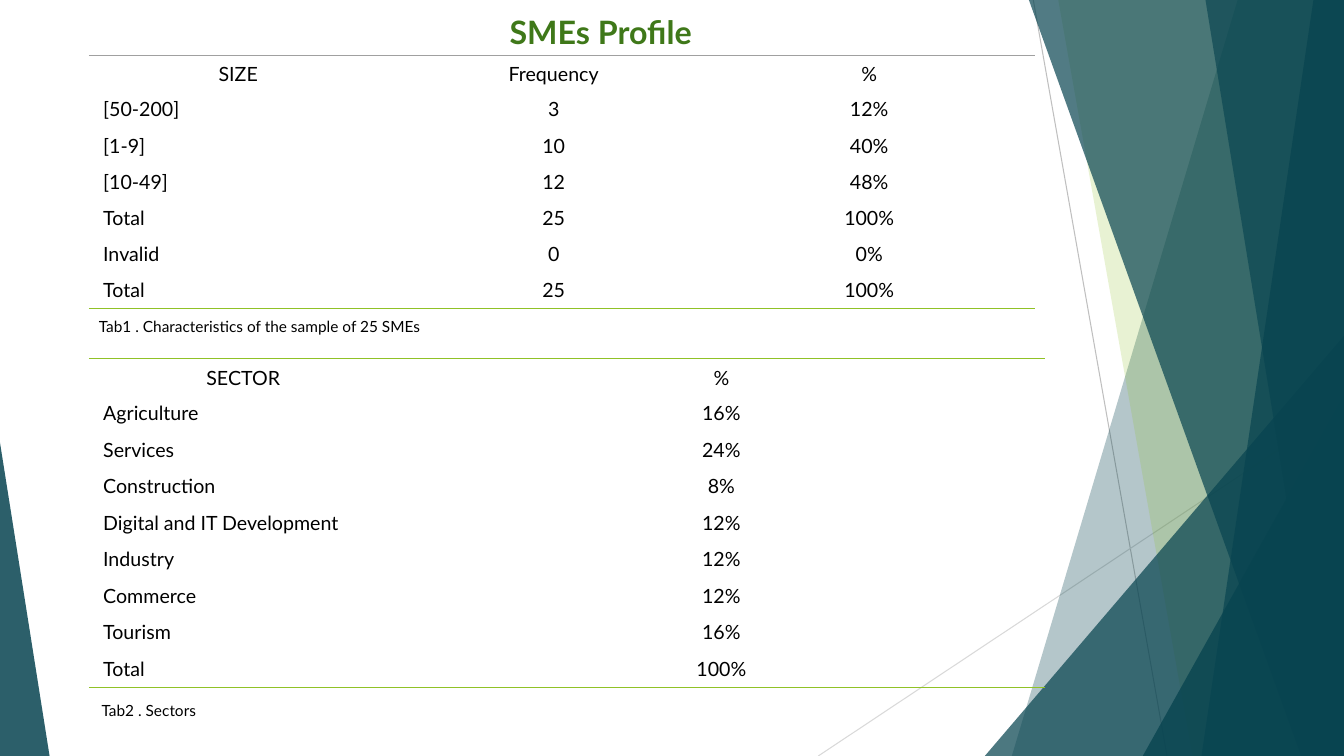
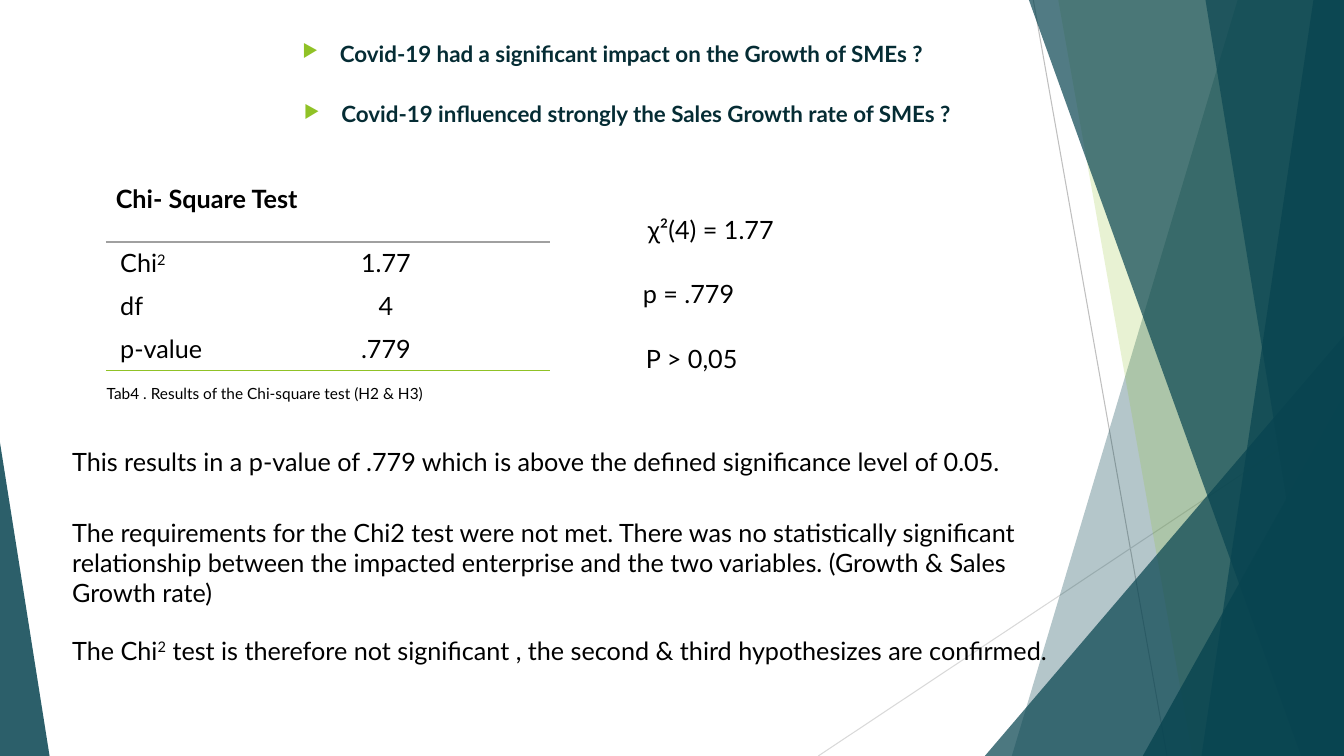
"""Build two slides on SME survey results: the sample profile and a chi-square test."""
import dataclasses
import typing

import lxml.etree
import pptx
import pptx.dml.color
import pptx.enum.shapes
import pptx.enum.text
import pptx.oxml.ns
import pptx.slide
import pptx.util

Cm = pptx.util.Cm
qn = pptx.oxml.ns.qn
Align = pptx.enum.text.PP_ALIGN
Anchor = pptx.enum.text.MSO_ANCHOR


@dataclasses.dataclass(frozen=True)
class Theme:
    font: str = "Lato"
    text: str = "000000"
    title: str = "3F7819"
    question: str = "052C34"
    teal: str = "084450"
    green: str = "90C226"
    rule: str = "A0A0A0"
    hairline: str = "BFBFBF"
    pale_hairline: str = "D9D9D9"
    title_size: float = 23
    body_size: float = 18
    question_size: float = 16
    table_size: float = 14
    caption_size: float = 11
    plain_table: str = "{2D5ABB26-0587-4C30-8999-92F81FD0307C}"


THEME = Theme()
WIDTH, HEIGHT = 33.87, 19.05


@dataclasses.dataclass(frozen=True)
class Ribbon:
    top: float
    bottom: float
    color: str
    opacity: int


@dataclasses.dataclass(frozen=True)
class Wedge:
    left: float
    top: float
    width: float
    apex: float
    opacity: int


@dataclasses.dataclass(frozen=True)
class Hairline:
    start: tuple[float, float]
    end: tuple[float, float]
    color: str


@dataclasses.dataclass(frozen=True)
class TextBlock:
    text: str
    left: float
    top: float
    width: float
    height: float = 1.02
    size: float = THEME.body_size
    color: str = THEME.text
    bold: bool = False
    centered: bool = False
    bullet: bool = False
    line_spacing: float = 1.0


@dataclasses.dataclass(frozen=True)
class DataTable:
    left: float
    top: float
    columns: tuple[float, ...]
    row_height: float
    rows: tuple[tuple[str, ...], ...]
    size: float = THEME.table_size
    top_color: str = THEME.rule
    header: bool = True


HAIRLINES = (
    Hairline((26.04, 0), (29.41, HEIGHT), THEME.hairline),
    Hairline((WIDTH, 10.24), (20.62, HEIGHT), THEME.pale_hairline),
)
FACETS = (
    Ribbon(31.19, 25.5, THEME.teal, 30),
    Ribbon(26.67, 30.05, THEME.green, 20),
    Wedge(24.82, 8.46, 9.05, 1, 72),
    Ribbon(25.93, 32.79, THEME.teal, 70),
    Ribbon(33.1, 30.28, THEME.teal, 70),
    Ribbon(30.38, 33.48, THEME.teal, 65),
    Wedge(28.8, 9.98, 5.07, 1, 80),
    Wedge(0, 11.15, 1.25, 0, 85),
)


def caption(text: str, left: float, top: float) -> TextBlock:
    return TextBlock(text, left, top, 12.52, 0.74, THEME.caption_size)


def question(text: str, left: float, top: float, width: float) -> TextBlock:
    return TextBlock(text, left, top, width, 1.2, THEME.question_size,
                     THEME.question, bold=True, centered=True, bullet=True)


PROFILE = (
    TextBlock("SMEs Profile", 9.02, 0.13, 12.24, 1.27, THEME.title_size,
              THEME.title, bold=True, centered=True, line_spacing=1.07),
    DataTable(2.24, 1.4, (7.95, 7.95, 7.95), 0.91, (
        ("SIZE", "Frequency", "%"),
        ("[50-200]", "3", "12%"),
        ("[1-9]", "10", "40%"),
        ("[10-49]", "12", "48%"),
        ("Total", "25", "100%"),
        ("Invalid", "0", "0%"),
        ("Total", "25", "100%"),
    )),
    caption("Tab1 . Characteristics of the sample of 25 SMEs", 2.24, 7.87),
    DataTable(2.24, 9.04, (8.2, 15.9), 0.92, (
        ("SECTOR", "%"),
        ("Agriculture", "16%"),
        ("Services", "24%"),
        ("Construction", "8%"),
        ("Digital and IT Development", "12%"),
        ("Industry", "12%"),
        ("Commerce", "12%"),
        ("Tourism", "16%"),
        ("Total", "100%"),
    ), top_color=THEME.green),
    caption("Tab2 . Sectors", 2.31, 17.55),
)
CHI_SQUARE = (
    question("Covid-19 had a significant impact on the Growth of SMEs ?", 5.28, 0.89, 20.32),
    question("Covid-19 influenced strongly the Sales Growth rate of SMEs ?", 5.89, 2.41, 19.84),
    TextBlock("Chi- Square Test", 2.67, 4.5, 9.25, bold=True),
    DataTable(2.67, 6.1, (3.45, 7.75), 1.08, (
        ("Chi^2", "1.77"),
        ("df", "4"),
        ("p-value", ".779"),
    ), size=THEME.body_size, header=False),
    caption("Tab4 . Results of the Chi-square test (H2 & H3)", 2.44, 9.55),
    TextBlock("χ²(4) = 1.77", 16.08, 5.28, 4.17),
    TextBlock("p = .779", 15.95, 6.88, 3.2),
    TextBlock("P > 0,05", 16.03, 8.53, 3.2),
    TextBlock("This results in a p-value of .779 which is above the defined significance level "
              "of 0.05.", 1.57, 11.13, 26.14),
    TextBlock("The requirements for the Chi2 test were not met. There was no statistically "
              "significant relationship between the impacted enterprise and the two variables. "
              "(Growth & Sales Growth rate)", 1.57, 12.9, 26.14, 2.57),
    TextBlock("The Chi^2^ test is therefore not significant , the second & third hypothesizes "
              "are confirmed.", 1.57, 15.88, 27.74),
)


def rgb(color: str) -> pptx.dml.color.RGBColor:
    return pptx.dml.color.RGBColor.from_string(color)


def write_text(para: typing.Any, text: str, *, size: float, color: str = THEME.text,
               bold: bool = False, centered: bool = False) -> None:
    para.alignment = Align.CENTER if centered else Align.LEFT
    for index, part in enumerate(text.split("^")):
        if not part:
            continue
        span = para.add_run()
        span.text = part
        span.font.name = THEME.font
        span.font.size = pptx.util.Pt(size)
        span.font.bold = bold
        span.font.color.rgb = rgb(color)
        if index % 2:
            span._r.get_or_add_rPr().set("baseline", "30000")


def add_bullet(para: typing.Any) -> None:
    properties = para._p.get_or_add_pPr()
    properties.set("marL", str(Cm(0.95)))
    properties.set("indent", str(-Cm(0.95)))
    bullet_color = lxml.etree.SubElement(properties, qn("a:buClr"))
    lxml.etree.SubElement(bullet_color, qn("a:srgbClr"), val=THEME.green)
    lxml.etree.SubElement(properties, qn("a:buSzPct"), val="80000")
    lxml.etree.SubElement(properties, qn("a:buChar"), char="▶")


def draw_text(page: pptx.slide.Slide, block: TextBlock) -> None:
    box = page.shapes.add_textbox(Cm(block.left), Cm(block.top), Cm(block.width), Cm(block.height))
    box.text_frame.word_wrap = True
    para = box.text_frame.paragraphs[0]
    para.line_spacing = block.line_spacing
    write_text(para, block.text, size=block.size, color=block.color,
               bold=block.bold, centered=block.centered)
    if block.bullet:
        add_bullet(para)


def add_border(cell: typing.Any, edge: str, color: str) -> None:
    line = lxml.etree.Element(qn(f"a:{edge}"), w=str(pptx.util.Pt(1)))
    fill = lxml.etree.SubElement(line, qn("a:solidFill"))
    lxml.etree.SubElement(fill, qn("a:srgbClr"), val=color)
    cell._tc.get_or_add_tcPr().insert(0, line)


def draw_table(page: pptx.slide.Slide, data: DataTable) -> None:
    count = len(data.rows)
    frame = page.shapes.add_table(count, len(data.columns), Cm(data.left), Cm(data.top),
                                  Cm(sum(data.columns)), Cm(data.row_height * count))
    table = frame.table
    table.first_row = table.horz_banding = False
    frame.element.find(f".//{qn('a:tableStyleId')}").text = THEME.plain_table
    for column, width in zip(table.columns, data.columns):
        column.width = Cm(width)
    for row_index, values in enumerate(data.rows):
        table.rows[row_index].height = Cm(data.row_height)
        is_header = data.header and row_index == 0
        for column_index, value in enumerate(values):
            cell = table.cell(row_index, column_index)
            cell.fill.background()
            cell.vertical_anchor = Anchor.BOTTOM if is_header else Anchor.TOP
            cell.margin_left = Cm(0.36)
            cell.margin_right = Cm(0.36 + 0.03 * data.size)
            cell.margin_top = cell.margin_bottom = Cm(0.15)
            write_text(cell.text_frame.paragraphs[0], value, size=data.size,
                       centered=is_header or column_index > 0)
            if row_index == count - 1:
                add_border(cell, "lnB", THEME.green)
            if row_index == 0:
                add_border(cell, "lnT", data.top_color)


def draw_hairline(page: pptx.slide.Slide, hairline: Hairline) -> typing.Any:
    ends = [Cm(value) for value in hairline.start + hairline.end]
    line = page.shapes.add_connector(pptx.enum.shapes.MSO_CONNECTOR.STRAIGHT, *ends)
    line.line.color.rgb = rgb(hairline.color)
    line.line.width = pptx.util.Pt(0.75)
    lxml.etree.SubElement(line.element.spPr, qn("a:effectLst"))
    return line


def draw_facet(page: pptx.slide.Slide, facet: Ribbon | Wedge) -> typing.Any:
    if isinstance(facet, Ribbon):
        outline = page.shapes.build_freeform(Cm(facet.top), 0)
        outline.add_line_segments([(Cm(WIDTH), 0), (Cm(WIDTH), Cm(HEIGHT)),
                                   (Cm(facet.bottom), Cm(HEIGHT))], close=True)
        shape, color = outline.convert_to_shape(), facet.color
    else:
        shape = page.shapes.add_shape(pptx.enum.shapes.MSO_SHAPE.ISOSCELES_TRIANGLE,
                                      Cm(facet.left), Cm(facet.top),
                                      Cm(facet.width), Cm(HEIGHT - facet.top))
        shape.adjustments[0] = facet.apex
        color = THEME.teal
    shape.shadow.inherit = False
    shape.line.fill.background()
    shape.fill.solid()
    shape.fill.fore_color.rgb = rgb(color)
    tint = shape.element.spPr.find(f".//{qn('a:srgbClr')}")
    lxml.etree.SubElement(tint, qn("a:alpha"), val=str(facet.opacity * 1000))
    return shape


def decorate_layout(layout: pptx.slide.SlideLayout, page: pptx.slide.Slide) -> None:
    for placeholder in list(layout.placeholders):
        placeholder.element.getparent().remove(placeholder.element)
    decorations = [draw_hairline(page, hairline) for hairline in HAIRLINES]
    decorations += [draw_facet(page, facet) for facet in FACETS]
    for shape in decorations:
        layout.shapes.element.append(shape.element)


def main() -> None:
    deck = pptx.Presentation()
    deck.slide_width, deck.slide_height = Cm(WIDTH), Cm(HEIGHT)
    layout = deck.slide_layouts[6]
    pages = [deck.slides.add_slide(layout) for _ in range(2)]
    decorate_layout(layout, pages[0])
    for page, items in zip(pages, (PROFILE, CHI_SQUARE)):
        for item in items:
            if isinstance(item, DataTable):
                draw_table(page, item)
            else:
                draw_text(page, item)
    deck.save("out.pptx")


if __name__ == "__main__":
    main()
